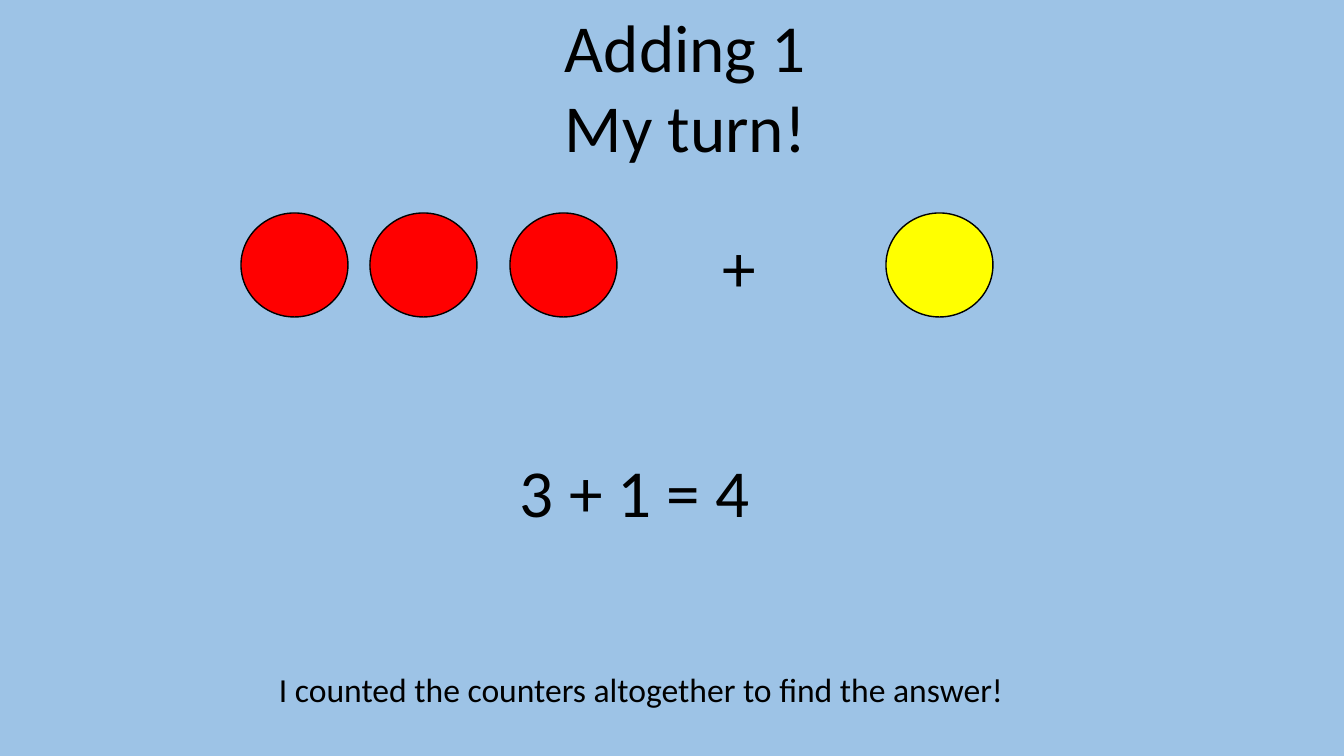
from pptx import Presentation
from pptx.dml.color import RGBColor
from pptx.enum import shapes, text
from pptx import util as u

PX = u.Inches(7.5) / 756
COLOURS = {"sky": "9DC3E6", "red": "FF0000", "yellow": "FFFF00", "ink": "000000"}
FONT = "Calibri"


def px(*lengths):
    return [u.Emu(round(length * PX)) for length in lengths]


def colour(name):
    return RGBColor.from_string(COLOURS[name])


def add_words(slide, box, lines, size, align=text.PP_ALIGN.LEFT):
    frame = slide.shapes.add_textbox(*px(*box)).text_frame
    frame.word_wrap = True
    frame.auto_size = text.MSO_AUTO_SIZE.SHAPE_TO_FIT_TEXT
    for i, line in enumerate(lines):
        paragraph = frame.add_paragraph() if i else frame.paragraphs[0]
        paragraph.alignment = align
        run = paragraph.add_run()
        run.text = line
        run.font.name = FONT
        run.font.size = u.Pt(size)
        run.font.color.rgb = colour("ink")


def add_counter(slide, box, fill):
    counter = slide.shapes.add_shape(shapes.MSO_SHAPE.OVAL, *px(*box))
    counter.shadow.inherit = False
    counter.fill.solid()
    counter.fill.fore_color.rgb = colour(fill)
    counter.line.color.rgb = colour("ink")
    counter.line.width = u.Pt(1)


def add_counter_row(slide, box):
    left, top, width, height = box
    diameter = 107
    # Three red counters, then one yellow at the right edge
    for offset in (0, 129, 269):
        add_counter(slide, (left + offset, top, diameter, height), "red")
    yellow_left = left + width - diameter
    add_counter(slide, (yellow_left, top, diameter, height), "yellow")
    # Plus sign leading up to the yellow counter
    add_words(slide, (yellow_left - 173, top + 7, 173, 92), ["+"], 48)


def add_adding_slide(prs):
    slide = prs.slides.add_slide(prs.slide_layouts[6])
    slide.background.fill.solid()
    slide.background.fill.fore_color.rgb = colour("sky")
    # Title
    add_words(slide, (124, 0, 1123, 173), ["Adding 1", "My turn!"], 48,
              text.PP_ALIGN.CENTER)
    # Counters
    add_counter_row(slide, (241, 213, 752, 104))
    # Number sentence and explanation
    add_words(slide, (510, 445, 272, 92), ["3 + 1 = 4"], 48)
    add_words(slide, (269, 664, 886, 50),
              ["I counted the counters altogether to find the answer!"], 24)


def main():
    prs = Presentation()
    prs.slide_width, prs.slide_height = px(1344, 756)
    add_adding_slide(prs)
    prs.save("out.pptx")


if __name__ == "__main__":
    main()
